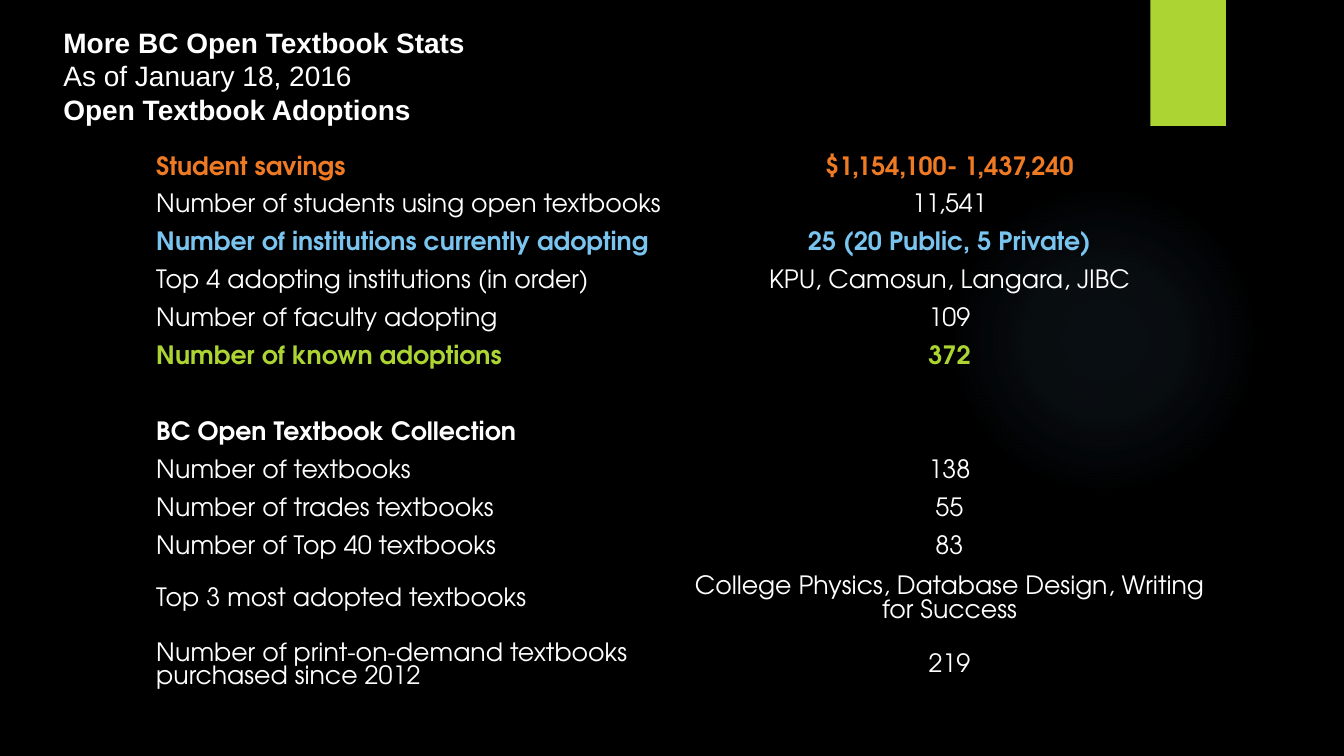
from lxml import etree
from pptx import Presentation
from pptx.dml.color import RGBColor
from pptx.enum.shapes import MSO_SHAPE as Shape
from pptx.enum.text import MSO_ANCHOR as Anchor, PP_ALIGN as Align
from pptx.oxml import parse_xml
from pptx.oxml.ns import nsdecls, qn
from pptx.util import Inches, Pt

WHITE, ORANGE, BLUE, GREEN = "FFFFFF", "EF7A24", "7AC4F0", "ACD433"
NO_STYLE = "{2D5ABB26-0587-4C30-8999-92F81FD0307C}"
GLOW_STOPS = [(0, 7), (36, 6), (69, 0), (100, 0)]
HEADING = [
    ("More BC Open Textbook Stats", True),
    ("As of January 18, 2016", False),
    ("Open Textbook Adoptions", True),
]
STATS = [
    ("Student savings", "$1,154,100- 1,437,240", ORANGE, True),
    ("Number of students using open textbooks", "11,541", WHITE, False),
    ("Number of institutions currently adopting", "25 (20 Public, 5 Private)", BLUE, True),
    ("Top 4 adopting institutions (in order)", "KPU, Camosun, Langara, JIBC", WHITE, False),
    ("Number of faculty adopting", "109", WHITE, False),
    ("Number of known adoptions", "372", GREEN, True),
    ("", "", WHITE, False),
    ("BC Open Textbook Collection", "", WHITE, True),
    ("Number of textbooks", "138", WHITE, False),
    ("Number of trades textbooks", "55", WHITE, False),
    ("Number of Top 40 textbooks", "83", WHITE, False),
    ("Top 3 most adopted textbooks",
     "College Physics, Database Design, Writing for Success", WHITE, False),
    ("Number of print-on-demand textbooks purchased since 2012", "219", WHITE, False),
]
TALL_ROWS = 2


def color(code):
    """Turn a hex string into a colour."""
    return RGBColor.from_string(code)


def write(paragraph, text, size, font, code, bold):
    """Add one formatted run to a paragraph."""
    run = paragraph.add_run()
    run.text = text
    run.font.size = Pt(size)
    run.font.name = font
    run.font.bold = bold
    run.font.color.rgb = color(code)


def add_plain(slide, kind, box):
    """Add a preset shape without outline or shadow."""
    shape = slide.shapes.add_shape(kind, *map(Inches, box))
    shape.shadow.inherit = False
    shape.line.fill.background()
    return shape


def add_backdrop(slide, glow_box, tab_box):
    """Draw the black ground, the faint round glow and the green tab."""
    slide.background.fill.solid()
    slide.background.fill.fore_color.rgb = color("000000")
    glow = add_plain(slide, Shape.OVAL, glow_box)
    stops = "".join(
        f'<a:gs pos="{pos * 1000}"><a:srgbClr val="{BLUE}">'
        f'<a:alpha val="{alpha * 1000}"/></a:srgbClr></a:gs>'
        for pos, alpha in GLOW_STOPS)
    gradient = parse_xml(
        f'<a:gradFill {nsdecls("a")}><a:gsLst>{stops}</a:gsLst><a:path path="circle">'
        '<a:fillToRect l="50000" t="50000" r="50000" b="50000"/></a:path></a:gradFill>')
    glow.element.spPr.find(qn("a:prstGeom")).addnext(gradient)
    tab = add_plain(slide, Shape.RECTANGLE, tab_box)
    tab.fill.solid()
    tab.fill.fore_color.rgb = color(GREEN)


def add_heading(slide, box):
    """Write the three heading lines."""
    frame = slide.shapes.add_textbox(*map(Inches, box)).text_frame
    frame.word_wrap = True
    for index, (line, bold) in enumerate(HEADING):
        paragraph = frame.add_paragraph() if index else frame.paragraphs[0]
        write(paragraph, line, 20, "Arial", WHITE, bold)


def add_stats(slide, box):
    """Lay out the statistics as a two-column table without borders."""
    left, top, width, height = map(Inches, box)
    table = slide.shapes.add_table(len(STATS), 2, left, top, width, height).table
    properties = table._tbl.tblPr
    properties.find(qn("a:tableStyleId")).text = NO_STYLE
    table.first_row = table.horz_banding = False
    tall = Inches(0.66)
    short_count = len(STATS) - TALL_ROWS
    short = (height - TALL_ROWS * tall) // short_count
    for index, (label, value, code, bold) in enumerate(STATS):
        table.rows[index].height = short if index < short_count else tall
        cells = table.rows[index].cells
        for cell, text, align in zip(cells, (label, value), (Align.LEFT, Align.CENTER)):
            cell.fill.background()
            cell.vertical_anchor = Anchor.MIDDLE
            cell.margin_left = cell.margin_right = Inches(0.09)
            cell.margin_top = cell.margin_bottom = Inches(0.04)
            paragraph = cell.text_frame.paragraphs[0]
            paragraph.alignment = align
            if text:
                write(paragraph, text, 18, "TeX Gyre Adventor", code, bold)
        if not value:
            cells[0].merge(cells[1])


def main():
    """Build and save the slide."""
    deck = Presentation()
    deck.slide_width, deck.slide_height = Inches(13.33), Inches(7.5)
    slide = deck.slides.add_slide(deck.slide_layouts[6])
    add_backdrop(slide, (9.41, 1.83, 3.08, 3.08), (11.41, 0, 0.75, 1.25))
    add_stats(slide, (1.46, 1.48, 10.61, 5.45))
    add_heading(slide, (0.53, 0.2, 10.8, 1.1))
    deck.save("out.pptx")


if __name__ == "__main__":
    main()
